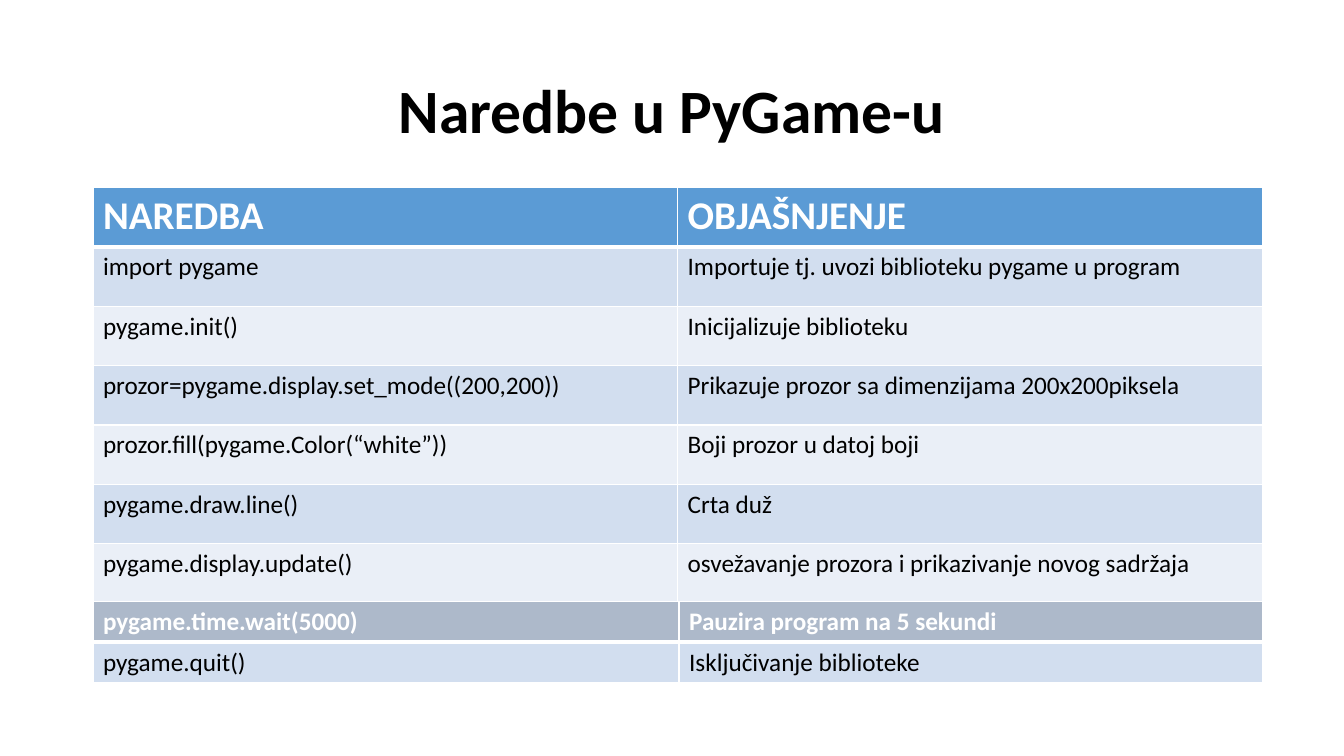
from lxml import etree
from pptx import Presentation
from pptx import util as u
from pptx.dml import color
from pptx.enum import text
from pptx.oxml import ns

FONT = "Calibri"
WHITE, BLACK = "FFFFFF", "000000"
HEADING_BLUE, PAUSE_GREY = "5B9BD5", "ADB9CA"
BANDS = ["D2DEEF", "EAEFF7"]

COMMANDS = [
    ("NAREDBA", "OBJAŠNJENJE"),
    ("import pygame", "Importuje tj. uvozi biblioteku pygame u program"),
    ("pygame.init()", "Inicijalizuje biblioteku"),
    ("prozor=pygame.display.set_mode((200,200))",
     "Prikazuje prozor sa dimenzijama 200x200piksela"),
    ("prozor.fill(pygame.Color(“white”))", "Boji prozor u datoj boji"),
    ("pygame.draw.line()", "Crta duž"),
    ("pygame.display.update()", "osvežavanje prozora i prikazivanje novog sadržaja"),
]
CLOSING_COMMANDS = [
    ("pygame.time.wait(5000)", "Pauzira program na 5 sekundi"),
    ("pygame.quit()", "Isključivanje biblioteke"),
]


def rgb(value):
    return color.RGBColor.from_string(value)


def add_text(paragraph, words, size, ink, bold):
    run = paragraph.add_run()
    run.text = words
    run.font.name = FONT
    run.font.size = u.Pt(size)
    run.font.bold = bold
    run.font.color.rgb = rgb(ink)


def set_borders(cell, widths):
    properties = cell._tc.get_or_add_tcPr()
    for position, (side, width) in enumerate(widths.items()):
        line = etree.Element(ns.qn(f"a:ln{side}"), w=str(u.Pt(width)))
        fill = etree.SubElement(line, ns.qn("a:solidFill"))
        etree.SubElement(fill, ns.qn("a:srgbClr"), val=WHITE)
        properties.insert(position, line)


def build_title(slide, left, top, width, height):
    title = slide.shapes.title
    title.left, title.top = u.Pt(left), u.Pt(top)
    title.width, title.height = u.Pt(width), u.Pt(height)
    title.text_frame.vertical_anchor = text.MSO_ANCHOR.MIDDLE
    heading = title.text_frame.paragraphs[0]
    heading.alignment = text.PP_ALIGN.CENTER
    heading.line_spacing = 0.9
    add_text(heading, "Naredbe u PyGame-u", 44, BLACK, True)


def build_commands(slide, left, top, widths, height, commands, head_fill, head_size):
    table = slide.shapes.add_table(
        len(commands), len(widths), u.Pt(left), u.Pt(top),
        u.Pt(sum(widths)), u.Pt(height)).table
    for column, width in zip(table.columns, widths):
        column.width = u.Pt(width)
    for r, entry in enumerate(commands):
        table.rows[r].height = u.Pt(height / len(commands))
        is_head = r == 0
        for c, words in enumerate(entry):
            cell = table.cell(r, c)
            cell.fill.solid()
            cell.fill.fore_color.rgb = rgb(head_fill if is_head else BANDS[(r - 1) % 2])
            set_borders(cell, {"L": 1, "R": 1, "T": 3 if r == 1 else 1,
                               "B": 3 if is_head else 1})
            add_text(cell.text_frame.paragraphs[0], words,
                     head_size if is_head else 18,
                     WHITE if is_head else BLACK, is_head)


def main():
    deck = Presentation()
    deck.slide_width, deck.slide_height = u.Pt(960), u.Pt(540)
    slide = deck.slides.add_slide(deck.slide_layouts[5])
    build_title(slide, 66, 28.75, 828, 104.4)
    build_commands(slide, 66.4, 133.9, [417.6, 417.6], 297, COMMANDS, HEADING_BLUE, 28)
    build_commands(slide, 66.4, 429.4, [418.7, 416.5], 58.4,
                   CLOSING_COMMANDS, PAUSE_GREY, 18)
    deck.save("out.pptx")


if __name__ == "__main__":
    main()
